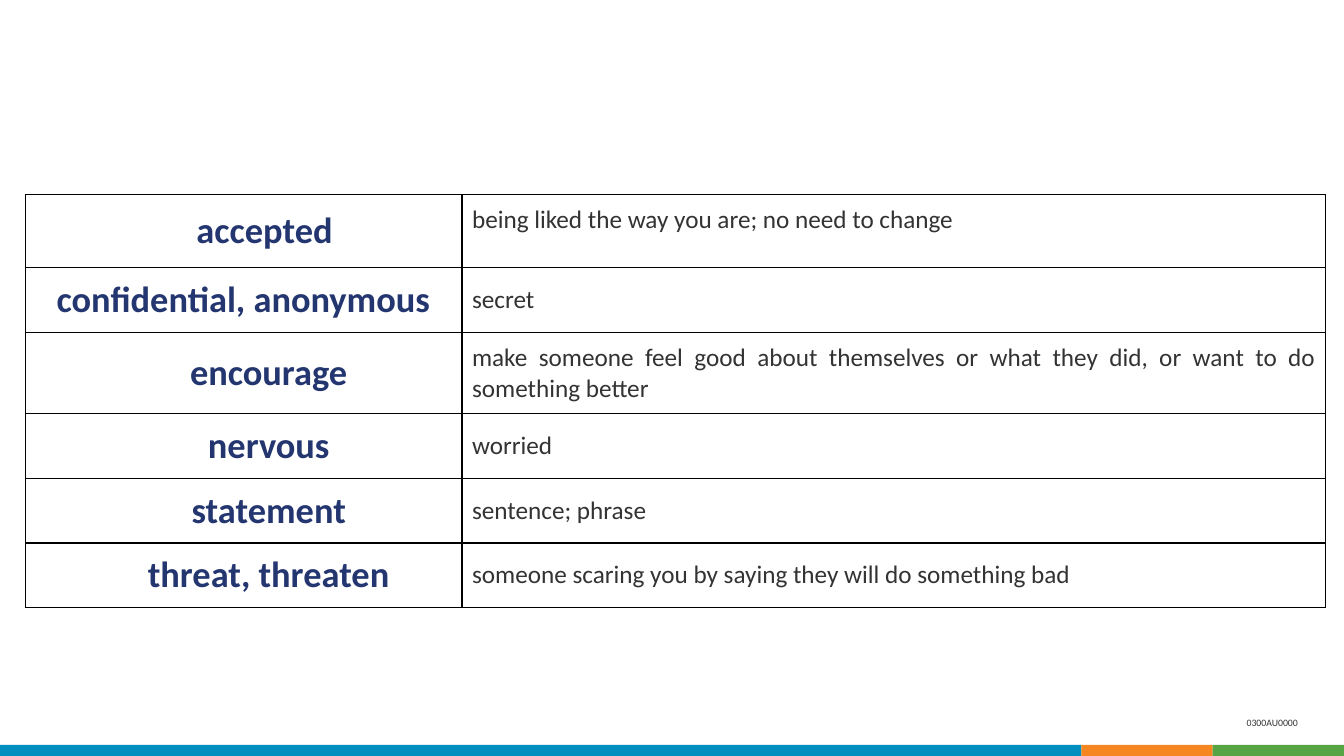
from dataclasses import dataclass

from lxml.etree import SubElement
from pptx import Presentation
from pptx.dml.color import RGBColor
from pptx.enum.shapes import MSO_SHAPE
from pptx.enum.text import MSO_ANCHOR, PP_ALIGN
from pptx.oxml.ns import qn
from pptx.util import Pt


@dataclass(frozen=True)
class Theme:
    font: str = "Calibri"
    term_color: str = "243670"
    text_color: str = "333333"
    border_color: str = "000000"
    blue: str = "008FBE"
    orange: str = "F58620"
    green: str = "57A445"
    term_size: float = 26
    meaning_size: float = 18
    code_size: float = 7
    border_width: float = 1
    cell_margin: float = 7.2


class SlideBuilder:
    def __init__(self, slide, theme):
        self.slide = slide
        self.theme = theme

    def add_run(self, paragraph, text, size, color, bold=False):
        run = paragraph.add_run()
        run.text = text
        run.font.name = self.theme.font
        run.font.size = Pt(size)
        run.font.bold = bold
        run.font.color.rgb = RGBColor.from_string(color)

    def add_band(self, left, top, width, height, color):
        shape = self.slide.shapes.add_shape(
            MSO_SHAPE.RECTANGLE, Pt(left), Pt(top), Pt(width), Pt(height))
        shape.shadow.inherit = False
        shape.fill.solid()
        shape.fill.fore_color.rgb = RGBColor.from_string(color)
        shape.line.fill.background()

    def add_code(self, text, left, top, width, height):
        box = self.slide.shapes.add_textbox(Pt(left), Pt(top), Pt(width), Pt(height))
        box.text_frame.word_wrap = False
        self.add_run(box.text_frame.paragraphs[0], text,
                     self.theme.code_size, self.theme.text_color)

    def style_cell(self, cell):
        margin = Pt(self.theme.cell_margin)
        cell.margin_left = cell.margin_right = margin
        cell.margin_top = cell.margin_bottom = margin
        cell.vertical_anchor = MSO_ANCHOR.MIDDLE
        properties = cell._tc.get_or_add_tcPr()
        for side in ("a:lnL", "a:lnR", "a:lnT", "a:lnB"):
            line = SubElement(properties, qn(side), w=str(Pt(self.theme.border_width)))
            fill = SubElement(line, qn("a:solidFill"))
            SubElement(fill, qn("a:srgbClr"), val=self.theme.border_color)
        cell.fill.background()

    def add_glossary(self, entries, left, top, column_widths, row_heights):
        table = self.slide.shapes.add_table(
            len(entries), len(column_widths), Pt(left), Pt(top),
            Pt(sum(column_widths)), Pt(sum(row_heights))).table
        table.first_row = False
        table.horz_banding = False
        for column, width in zip(table.columns, column_widths):
            column.width = Pt(width)
        for row, height, (term, meaning, indent) in zip(table.rows, row_heights, entries):
            row.height = Pt(height)
            term_cell, meaning_cell = row.cells
            self.style_cell(term_cell)
            self.style_cell(meaning_cell)
            paragraph = term_cell.text_frame.paragraphs[0]
            paragraph.alignment = PP_ALIGN.CENTER
            paragraph._p.get_or_add_pPr().set("marL", str(Pt(indent)))
            self.add_run(paragraph, term, self.theme.term_size,
                         self.theme.term_color, bold=True)
            paragraph = meaning_cell.text_frame.paragraphs[0]
            paragraph.alignment = PP_ALIGN.JUSTIFY
            self.add_run(paragraph, meaning, self.theme.meaning_size,
                         self.theme.text_color)
        table.cell(0, 1).vertical_anchor = MSO_ANCHOR.TOP


def main():
    presentation = Presentation()
    presentation.slide_width = Pt(960)
    presentation.slide_height = Pt(540)
    slide = presentation.slides.add_slide(presentation.slide_layouts[6])
    theme = Theme()
    builder = SlideBuilder(slide, theme)

    band_left = 0
    for width, color in ((772.5, theme.blue), (93.75, theme.orange), (93.75, theme.green)):
        builder.add_band(band_left, 532, width, 8, color)
        band_left += width
    builder.add_code("0300AU0000", 883.4, 508.3, 53.3, 15.8)

    entries = (
        ("accepted ", "being liked the way you are; no need to change", 36),
        ("confidential, anonymous", "secret", 0),
        ("encourage", "make someone feel good about themselves or what they did, "
                      "or want to do something better", 36),
        ("nervous", "worried", 36),
        ("statement", "sentence; phrase", 36),
        ("threat, threaten", "someone scaring you by saying they will do something bad ", 36),
    )
    builder.add_glossary(entries, 18, 139, (312, 617),
                         (52.1, 46.2, 58.2, 46.2, 46.2, 46.2))
    presentation.save("out.pptx")


if __name__ == "__main__":
    main()
